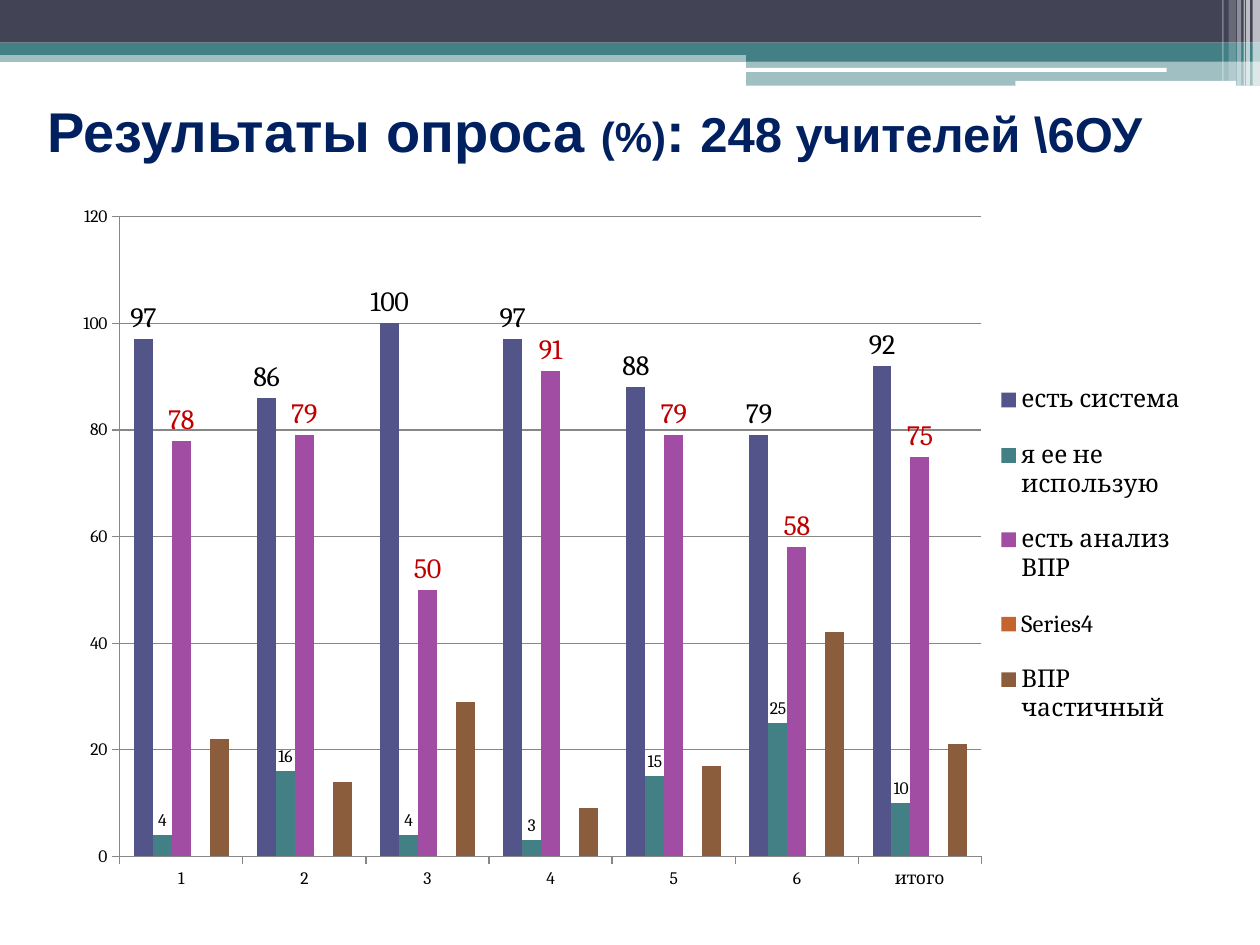
from lxml import etree
from pptx import Presentation
from pptx.chart.data import CategoryChartData
from pptx.dml.color import RGBColor
from pptx.enum.chart import XL_CHART_TYPE as ChartType, XL_LABEL_POSITION as LabelPos
from pptx.enum.chart import XL_LEGEND_POSITION as LegendPos, XL_TICK_MARK as Tick
from pptx.enum.shapes import MSO_SHAPE as Shape
from pptx.enum.text import MSO_ANCHOR as Anchor
from pptx.oxml import parse_xml
from pptx.oxml.ns import nsdecls, qn
from pptx.util import Cm, Pt

INCH = 2.54

# left, top, width, height in inches; colour; opacity in percent
BANDS = [
    (0, 0.4, 10, 0.09, "438086", 50),
    (0, 0, 10, 0.34, "424456", 100),
    (0, 0.34, 10, 0.1, "438086", 100),
    (5.92, 0.39, 4.08, 0.1, "438086", 100),
    (5.92, 0.48, 4.08, 0.2, "438086", 50),
]
WHITE_BARS = [(5.91, 0.54, 3.35, 0.03), (8.06, 0.64, 1.75, 0.04)]
# left, width, height in inches; opacity in percent
STRIPES = [
    (9.94, 0.06, 0.68, 65),
    (9.89, 0.03, 0.68, 65),
    (9.87, 0.01, 0.68, 60),
    (9.82, 0.03, 0.68, 40),
    (9.75, 0.06, 0.64, 20),
    (9.7, 0.01, 0.64, 30),
]
TITLE = [("Результаты опроса ", 32), ("(%)", 24), (": ", 32), ("248 учителей \\6ОУ", 28)]

CATEGORIES = ["1", "2", "3", "4", "5", "6", "итого"]
# name, values, colour, label size (None: no labels), label colour
SERIES = [
    ("есть система ", [97, 86, 100, 97, 88, 79, 92], "53548A", 16, "000000"),
    ("я ее не использую", [4, 16, 4, 3, 15, 25, 10], "438086", 10, "000000"),
    ("есть анализ ВПР", [78, 79, 50, 91, 79, 58, 75], "A04DA3", 16, "C00000"),
    ("Series4", [None] * 7, "C4652D", None, None),
    ("ВПР частичный", [22, 14, 29, 9, 17, 42, 21], "8B5D3D", None, None),
]


def rgb(value):
    return RGBColor.from_string(value)


def place(*inches):
    return [Cm(round(value * INCH, 2)) for value in inches]


def apply(target, values):
    for name, value in values.items():
        setattr(target, name, value)


def style_font(font, size, colour, face, bold=False):
    apply(font, {"size": Pt(size), "name": face, "bold": bold})
    font.color.rgb = rgb(colour)


def add_bar(page, frame, colour, opacity=100, kind=Shape.RECTANGLE):
    bar = page.shapes.add_shape(kind, *place(*frame))
    bar.shadow.inherit = False
    bar.line.fill.background()
    bar.fill.solid()
    bar.fill.fore_color.rgb = rgb(colour)
    if opacity < 100:
        tone = bar.fill._xPr.find(".//" + qn("a:srgbClr"))
        etree.SubElement(tone, qn("a:alpha"), val=str(opacity * 1000))


def add_header(page):
    for *frame, colour, opacity in BANDS:
        add_bar(page, frame, colour, opacity)
    for frame in WHITE_BARS:
        add_bar(page, frame, "FFFFFF", kind=Shape.ROUNDED_RECTANGLE)
    for left, width, height, opacity in STRIPES:
        add_bar(page, (left, 0, width, height), "FFFFFF", opacity)


def add_title(page):
    box = page.shapes.add_textbox(*place(0.28, 0.68, 9.24, 0.71))
    apply(box.text_frame, {"word_wrap": True, "vertical_anchor": Anchor.MIDDLE})
    para = box.text_frame.paragraphs[0]
    for text, size in TITLE:
        span = para.add_run()
        span.text = text
        style_font(span.font, size, "002060", "Arial", bold=True)


def set_layout(parent, x, y, w, h, inner=False):
    """Fix a chart part's place, in fractions of the chart."""
    for old in parent.findall(qn("c:layout")):
        parent.remove(old)
    target = '<c:layoutTarget val="inner"/>' if inner else ""
    layout = parse_xml(
        f'<c:layout {nsdecls("c")}><c:manualLayout>{target}'
        '<c:xMode val="edge"/><c:yMode val="edge"/>'
        f'<c:x val="{x}"/><c:y val="{y}"/><c:w val="{w}"/><c:h val="{h}"/>'
        '</c:manualLayout></c:layout>')
    parent.insert(0 if inner else 1, layout)


def style_series(series, colour, label_size, label_colour):
    series.format.fill.solid()
    series.format.fill.fore_color.rgb = rgb(colour)
    if label_size:
        labels = series.data_labels
        apply(labels, {"show_value": True, "position": LabelPos.OUTSIDE_END})
        style_font(labels.font, label_size, label_colour, "Cambria")


def style_axes(chart):
    for axis in (chart.category_axis, chart.value_axis):
        apply(axis, {"major_tick_mark": Tick.OUTSIDE, "minor_tick_mark": Tick.NONE})
        axis.format.line.color.rgb = rgb("878787")
    apply(chart.value_axis, {"minimum_scale": 0, "maximum_scale": 120,
                             "major_unit": 20, "has_major_gridlines": True})
    chart.value_axis.major_gridlines.format.line.color.rgb = rgb("878787")


def add_survey_chart(page):
    data = CategoryChartData()
    data.categories = CATEGORIES
    for name, values, *_ in SERIES:
        data.add_series(name, values)
    chart = page.shapes.add_chart(
        ChartType.COLUMN_CLUSTERED, *place(0.5, 1.55, 9, 5.64), data).chart
    apply(chart, {"has_title": False, "has_legend": True})
    style_font(chart.font, 10, "000000", "Cambria")
    plot = chart.plots[0]
    apply(plot, {"gap_width": 150, "overlap": 0, "vary_by_categories": False})
    for series, (_, _, *look) in zip(plot.series, SERIES):
        style_series(series, *look)
    style_axes(chart)
    apply(chart.legend, {"position": LegendPos.RIGHT, "include_in_layout": False})
    style_font(chart.legend.font, 14, "000000", "Cambria")
    area = chart._chartSpace.find(".//" + qn("c:plotArea"))
    set_layout(area, 0.05, 0.03, 0.76, 0.9, inner=True)
    set_layout(chart.legend._element, 0.83, 0.23, 0.16, 0.55)


def main():
    deck = Presentation()
    apply(deck, {"slide_width": Cm(25.4), "slide_height": Cm(19.05)})
    page = deck.slides.add_slide(deck.slide_layouts[6])
    add_header(page)
    add_title(page)
    add_survey_chart(page)
    deck.save("out.pptx")


if __name__ == "__main__":
    main()
